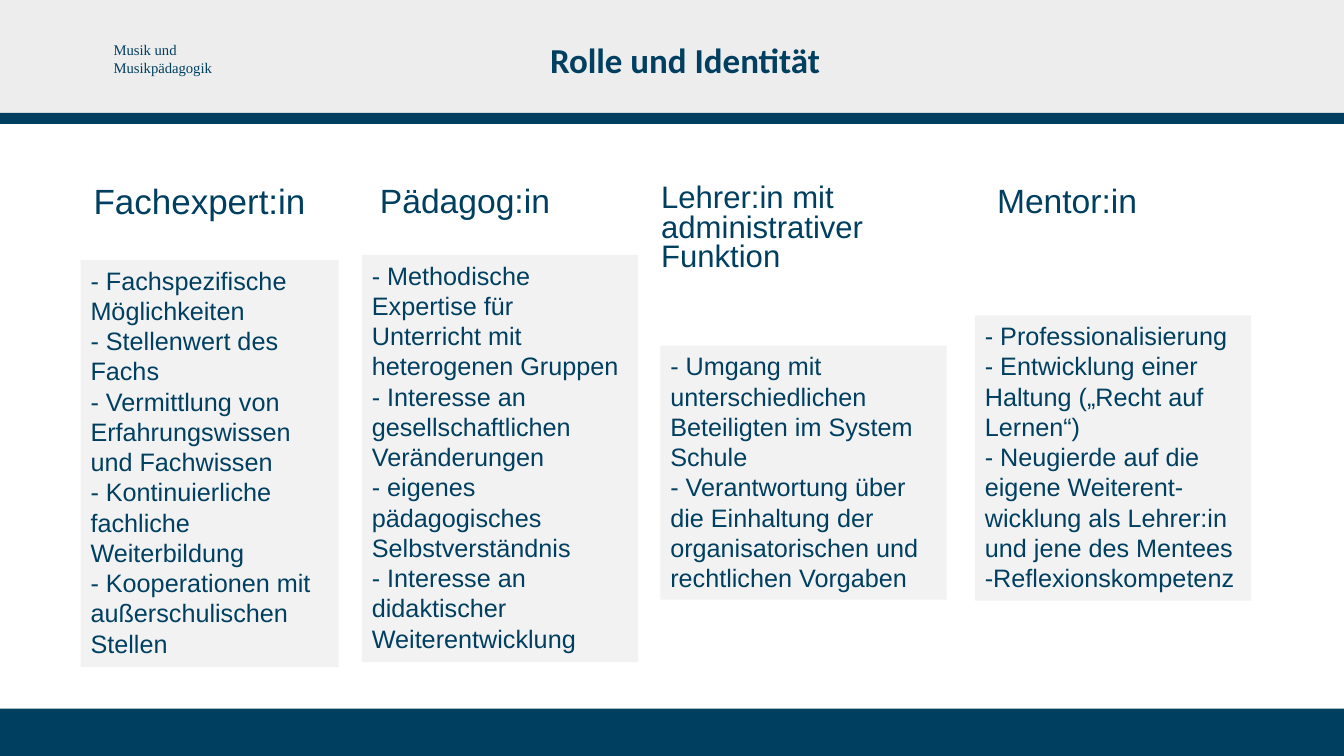
"""Builds the slide "Rolle und Identität" with four teacher roles and their descriptions."""
import pptx
import pptx.dml.color
import pptx.enum.shapes
import pptx.enum.text
import pptx.util

Inches = pptx.util.Inches
PP_ALIGN = pptx.enum.text.PP_ALIGN
MSO_ANCHOR = pptx.enum.text.MSO_ANCHOR
COLORS = {"navy": "003F60", "header": "EDEDED", "panel": "F2F2F2"}

deck = pptx.Presentation()
deck.slide_width, deck.slide_height = Inches(13.33), Inches(7.5)
slide = deck.slides.add_slide(deck.slide_layouts[6])


def add_panel(left, top, width, height, color):
    panel = slide.shapes.add_shape(
        pptx.enum.shapes.MSO_SHAPE.RECTANGLE,
        Inches(left), Inches(top), Inches(width), Inches(height))
    panel.shadow.inherit = False
    panel.fill.solid()
    panel.fill.fore_color.rgb = pptx.dml.color.RGBColor.from_string(COLORS[color])
    panel.line.fill.background()
    return panel


def write(shape, text, size, font="Arial", spacing=1.0, align=PP_ALIGN.LEFT,
          anchor=MSO_ANCHOR.TOP, bold=False):
    frame = shape.text_frame
    frame.word_wrap = True
    frame.vertical_anchor = anchor
    frame.text = text
    for paragraph in frame.paragraphs:
        paragraph.alignment = align
        paragraph.line_spacing = spacing
        for run in paragraph.runs:
            run.font.name = font
            run.font.size = pptx.util.Pt(size)
            run.font.bold = bold
            run.font.color.rgb = pptx.dml.color.RGBColor.from_string(COLORS["navy"])


add_panel(0, 7.03, 13.33, 0.47, "navy")
add_panel(0, 0, 13.33, 1.13, "header")
add_panel(0, 1.12, 13.33, 0.11, "navy")

department = slide.shapes.add_textbox(Inches(1.03), Inches(0.36), Inches(2.03), Inches(0.45))
write(department, "Musik und\nMusikpädagogik", 10.5, "Times New Roman")

title = slide.shapes.add_textbox(Inches(2.26), Inches(0.18), Inches(9.07), Inches(0.87))
write(title, "Rolle und Identität", 25, "Calibri", 0.9, PP_ALIGN.CENTER, MSO_ANCHOR.MIDDLE, True)

roles = [
    ("Fachexpert:in", (0.83, 2.49, 0.62), 25, 0.9, (0.8, 2.58, 2.56, 4.04), [
        "- Fachspezifische Möglichkeiten",
        "- Stellenwert des Fachs",
        "- Vermittlung von Erfahrungswissen und Fachwissen",
        "- Kontinuierliche fachliche Weiterbildung",
        "- Kooperationen mit außerschulischen Stellen"]),
    ("Pädagog:in", (3.67, 2.74, 0.6), 24, 0.9, (3.59, 2.53, 2.74, 4.04), [
        "- Methodische Expertise für Unterricht mit heterogenen Gruppen",
        "- Interesse an gesellschaftlichen Veränderungen",
        "- eigenes pädagogisches Selbstverständnis",
        "- Interesse an didaktischer Weiterentwicklung"]),
    ("Lehrer:in mit administrativer Funktion", (6.46, 3.03, 1.05), 22.2, 0.8,
     (6.55, 3.43, 2.84, 2.52), [
        "- Umgang mit unterschiedlichen Beteiligten im System Schule",
        "- Verantwortung über die Einhaltung der organisatorischen und rechtlichen Vorgaben"]),
    ("Mentor:in", (9.79, 2.49, 0.87), 24, 0.9, (9.67, 3.13, 2.74, 2.83), [
        "- Professionalisierung",
        "- Entwicklung einer Haltung („Recht auf Lernen“)",
        "- Neugierde auf die eigene Weiterent-wicklung als Lehrer:in und jene des Mentees",
        "-Reflexionskompetenz"]),
]

for role, (left, width, height), size, spacing, panel_box, duties in roles:
    heading = slide.shapes.add_textbox(Inches(left), Inches(1.78), Inches(width), Inches(height))
    write(heading, role, size, spacing=spacing)
    duties_panel = add_panel(*panel_box, "panel")
    write(duties_panel, "\n".join(duties), 18)
    duties_panel.text_frame.auto_size = pptx.enum.text.MSO_AUTO_SIZE.SHAPE_TO_FIT_TEXT

deck.save("out.pptx")
